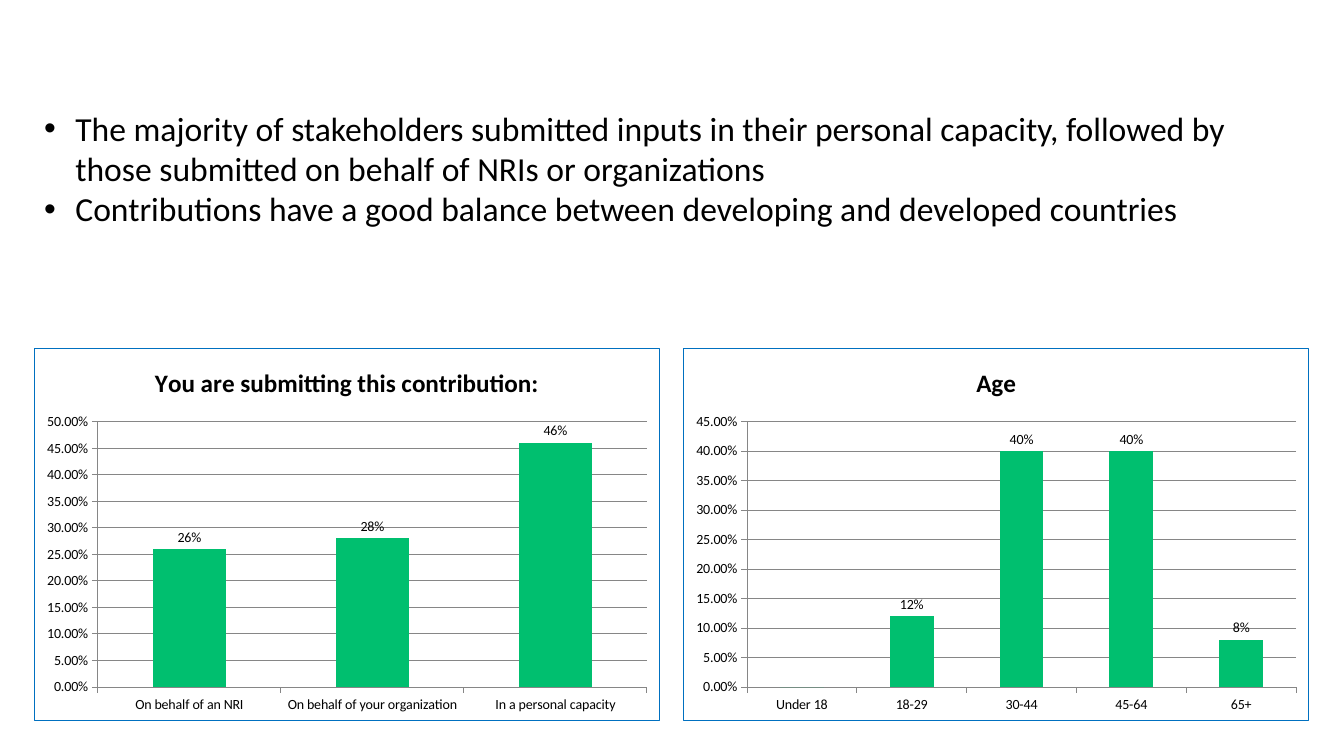
"""Build a slide of survey findings above two column charts of respondents."""
import pptx
import pptx.chart.data
import pptx.dml.color
import pptx.enum.chart
import pptx.enum.text
import pptx.oxml
import pptx.oxml.ns
import pptx.util
from pptx.util import Cm

FINDINGS = [
    "The majority of stakeholders submitted inputs in their personal capacity, "
    "followed by those submitted on behalf of NRIs or organizations",
    "Contributions have a good balance between developing and developed countries",
]
SURVEY_CHARTS = [
    {
        "title": "You are submitting this contribution:",
        "shares": {
            "On behalf of an NRI": 0.26,
            "On behalf of your organization": 0.28,
            "In a personal capacity": 0.46,
        },
        "top_of_scale": 0.5,
    },
    {
        "title": "Age",
        "shares": {"Under 18": 0, "18-29": 0.12, "30-44": 0.4, "45-64": 0.4, "65+": 0.08},
        "top_of_scale": 0.45,
    },
]
THEME = {
    "font": "Calibri",
    "text": "000000",
    "column": "00BF6F",
    "border": "0070C0",
    "grid": "868686",
    "body_size": 24,
    "title_size": 18,
    "label_size": 10,
}
SLIDE_SIZE = Cm(33.87), Cm(19.05)
MARGIN = Cm(0.86)
FINDINGS_TOP, FINDINGS_WIDTH, FINDINGS_HEIGHT = Cm(2.59), Cm(31.39), Cm(4.11)
CHART_TOP, CHART_WIDTH, CHART_HEIGHT = Cm(8.76), Cm(15.77), Cm(9.4)
CHART_STEP = Cm(16.36)
BULLET_INDENT = Cm(0.79)
DRAWING_NS = "http://schemas.openxmlformats.org/drawingml/2006/main"


def color(name):
    return pptx.dml.color.RGBColor.from_string(THEME[name])


def style_font(font, size, bold=False):
    font.name = THEME["font"]
    font.size = pptx.util.Pt(THEME[size])
    font.bold = bold
    font.color.rgb = color("text")


def write_text(paragraph, text, size="body_size", bold=False, bullet=False):
    run = paragraph.add_run()
    run.text = text
    style_font(run.font, size, bold)
    if bullet:
        properties = paragraph._p.get_or_add_pPr()
        properties.set("marL", str(BULLET_INDENT))
        properties.set("indent", str(-BULLET_INDENT))
        for tag, attributes in (("buFont", 'typeface="Arial"'), ("buChar", 'char="•"')):
            properties.append(
                pptx.oxml.parse_xml(f'<a:{tag} xmlns:a="{DRAWING_NS}" {attributes}/>')
            )


def add_border(chart):
    border = pptx.oxml.parse_xml(
        '<c:spPr xmlns:c="http://schemas.openxmlformats.org/drawingml/2006/chart" '
        f'xmlns:a="{DRAWING_NS}"><a:noFill/><a:ln w="{pptx.util.Pt(0.75)}"><a:solidFill>'
        f'<a:srgbClr val="{THEME["border"]}"/></a:solidFill></a:ln></c:spPr>'
    )
    chart._chartSpace.find(pptx.oxml.ns.qn("c:chart")).addnext(border)


def add_survey_chart(slide, left, title, shares, top_of_scale):
    data = pptx.chart.data.CategoryChartData(number_format="0.00%")
    data.categories = list(shares)
    data.add_series("Series 1", list(shares.values()))
    chart = slide.shapes.add_chart(
        pptx.enum.chart.XL_CHART_TYPE.COLUMN_CLUSTERED,
        left, CHART_TOP, CHART_WIDTH, CHART_HEIGHT, data,
    ).chart
    style_font(chart.font, "label_size")
    add_border(chart)
    chart.has_legend = False
    chart.has_title = True
    heading = chart.chart_title.text_frame.paragraphs[0]
    write_text(heading, title, size="title_size", bold=True)

    for axis in (chart.category_axis, chart.value_axis):
        axis.major_tick_mark = pptx.enum.chart.XL_TICK_MARK.OUTSIDE
        axis.minor_tick_mark = pptx.enum.chart.XL_TICK_MARK.NONE
        axis.format.line.color.rgb = color("grid")
    scale = chart.value_axis
    scale.minimum_scale, scale.maximum_scale, scale.major_unit = 0, top_of_scale, 0.05
    scale.tick_labels.number_format = "0.00%"
    scale.tick_labels.number_format_is_linked = False
    scale.major_gridlines.format.line.color.rgb = color("grid")

    plot = chart.plots[0]
    plot.gap_width = 150
    plot.vary_by_categories = False
    columns = plot.series[0]
    columns.format.fill.solid()
    columns.format.fill.fore_color.rgb = color("column")
    labels = columns.data_labels
    labels.show_value = True
    labels.number_format = "0%;;"
    labels.number_format_is_linked = False
    labels.position = pptx.enum.chart.XL_LABEL_POSITION.OUTSIDE_END
    style_font(labels.font, "label_size")


def main():
    deck = pptx.Presentation()
    deck.slide_width, deck.slide_height = SLIDE_SIZE
    slide = deck.slides.add_slide(deck.slide_layouts[6])

    findings = slide.shapes.add_textbox(
        MARGIN, FINDINGS_TOP, FINDINGS_WIDTH, FINDINGS_HEIGHT
    ).text_frame
    findings.word_wrap = True
    findings.vertical_anchor = pptx.enum.text.MSO_ANCHOR.TOP
    for index, finding in enumerate(FINDINGS):
        paragraph = findings.add_paragraph() if index else findings.paragraphs[0]
        write_text(paragraph, finding, bullet=True)

    for index, survey in enumerate(SURVEY_CHARTS):
        add_survey_chart(slide, MARGIN + index * CHART_STEP, **survey)
    deck.save("out.pptx")


if __name__ == "__main__":
    main()
